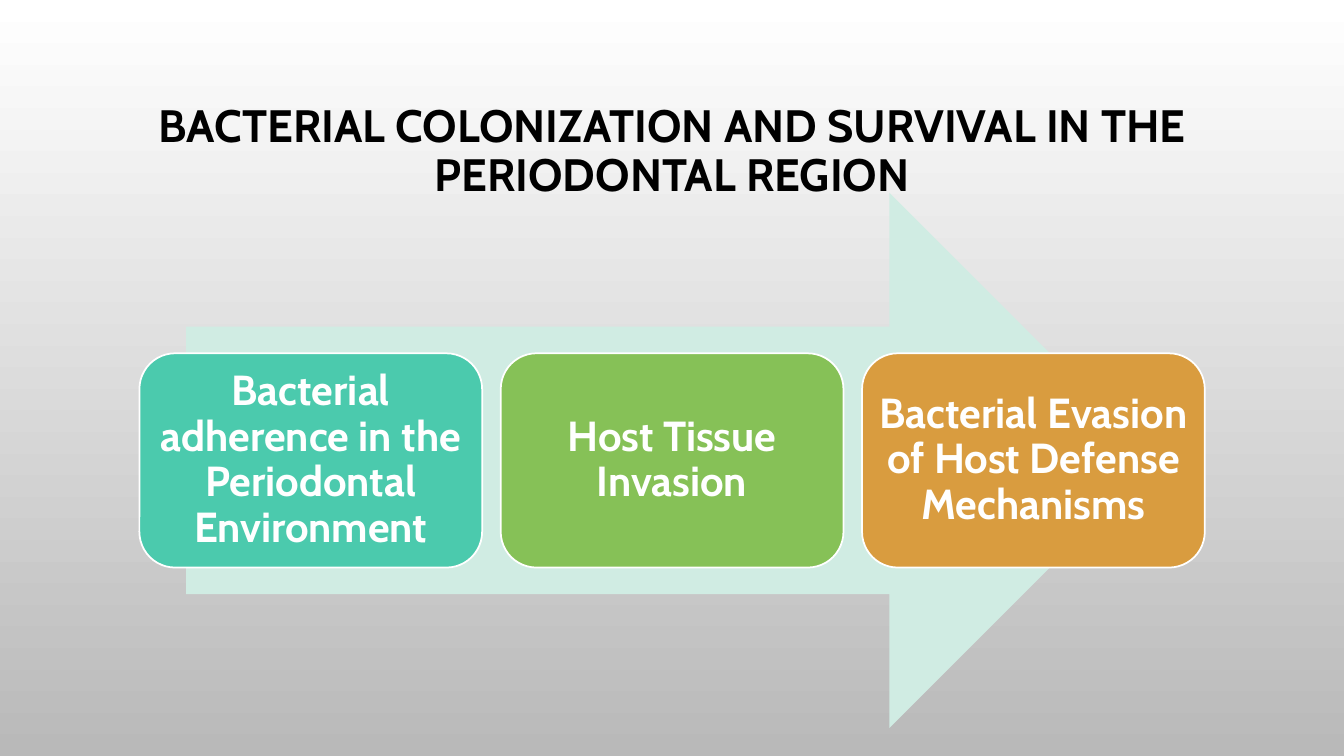
from dataclasses import dataclass

from pptx import Presentation
from pptx.dml.color import RGBColor
from pptx.enum.shapes import MSO_SHAPE
from pptx.enum.text import MSO_ANCHOR, PP_ALIGN
from pptx.shapes.autoshape import Shape
from pptx.slide import Slide
from pptx.util import Pt

ARROW = MSO_SHAPE.RIGHT_ARROW
ROUNDED = MSO_SHAPE.ROUNDED_RECTANGLE
MIDDLE = MSO_ANCHOR.MIDDLE
CENTER = PP_ALIGN.CENTER


@dataclass(frozen=True)
class Theme:
    font: str = "Cabin"
    title_size: float = 32.4
    stage_size: float = 30
    title_color: str = "000000"
    stage_text: str = "FFFFFF"
    outline: str = "FFFFFF"
    arrow: str = "D0ECE3"
    bg_top: str = "FFFFFF"
    bg_bottom: str = "B9B9B9"


@dataclass(frozen=True)
class Box:
    left: float
    top: float
    width: float
    height: float


@dataclass(frozen=True)
class Stage:
    text: str
    color: str


THEME = Theme()
TITLE = "BACTERIAL COLONIZATION AND SURVIVAL IN THE PERIODONTAL REGION"
TITLE_BOX = Box(72, 46, 816, 126)
ARROW_BOX = Box(133, 137.7, 693.5, 382.3)
FIRST_STAGE = Box(99.6, 252.4, 244.8, 153)
STAGE_PITCH = 258.1
STAGE_INSET = 1.5
STAGES = [
    Stage("Bacterial adherence in the Periodontal Environment", "4BCAAD"),
    Stage("Host Tissue Invasion", "86C157"),
    Stage("Bacterial Evasion of Host Defense Mechanisms", "D99C3F"),
]


def rgb(value: str) -> RGBColor:
    return RGBColor.from_string(value)


def points(box: Box) -> tuple[Pt, Pt, Pt, Pt]:
    return Pt(box.left), Pt(box.top), Pt(box.width), Pt(box.height)


def write_text(s: Shape, text: str, size: float, color: str) -> None:
    """Fill a shape with one bold, centred, wrapping paragraph."""
    tf = s.text_frame
    tf.text = text
    tf.word_wrap = True
    tf.vertical_anchor = MIDDLE
    p = tf.paragraphs[0]
    p.alignment = CENTER
    p.line_spacing = 0.9
    font = p.runs[0].font
    font.name = THEME.font
    font.size = Pt(size)
    font.bold = True
    font.color.rgb = rgb(color)


def add_filled_shape(slide: Slide, kind: MSO_SHAPE, box: Box, color: str) -> Shape:
    s = slide.shapes.add_shape(kind, *points(box))
    s.shadow.inherit = False
    s.fill.solid()
    s.fill.fore_color.rgb = rgb(color)
    s.line.fill.background()
    return s


def add_stage(slide: Slide, stage: Stage, box: Box) -> None:
    s = add_filled_shape(slide, ROUNDED, box, stage.color)
    s.line.color.rgb = rgb(THEME.outline)
    s.line.width = Pt(1.25)
    tf = s.text_frame
    tf.margin_left = tf.margin_right = Pt(STAGE_INSET)
    tf.margin_top = tf.margin_bottom = Pt(STAGE_INSET)
    write_text(s, stage.text, THEME.stage_size, THEME.stage_text)


def paint_background(slide: Slide) -> None:
    fill = slide.background.fill
    fill.gradient()
    fill.gradient_angle = 270
    colors = (THEME.bg_top, THEME.bg_bottom)
    for position, (stop, color) in enumerate(zip(fill.gradient_stops, colors)):
        stop.position = position
        stop.color.rgb = rgb(color)


def main() -> None:
    prs = Presentation()
    prs.slide_width, prs.slide_height = Pt(960), Pt(540)
    slide = prs.slides.add_slide(prs.slide_layouts[6])
    paint_background(slide)

    title = slide.shapes.add_textbox(*points(TITLE_BOX))
    write_text(title, TITLE, THEME.title_size, THEME.title_color)

    add_filled_shape(slide, ARROW, ARROW_BOX, THEME.arrow)
    for i, stage in enumerate(STAGES):
        left = FIRST_STAGE.left + i * STAGE_PITCH
        box = Box(left, FIRST_STAGE.top, FIRST_STAGE.width, FIRST_STAGE.height)
        add_stage(slide, stage, box)

    prs.save("out.pptx")


if __name__ == "__main__":
    main()
